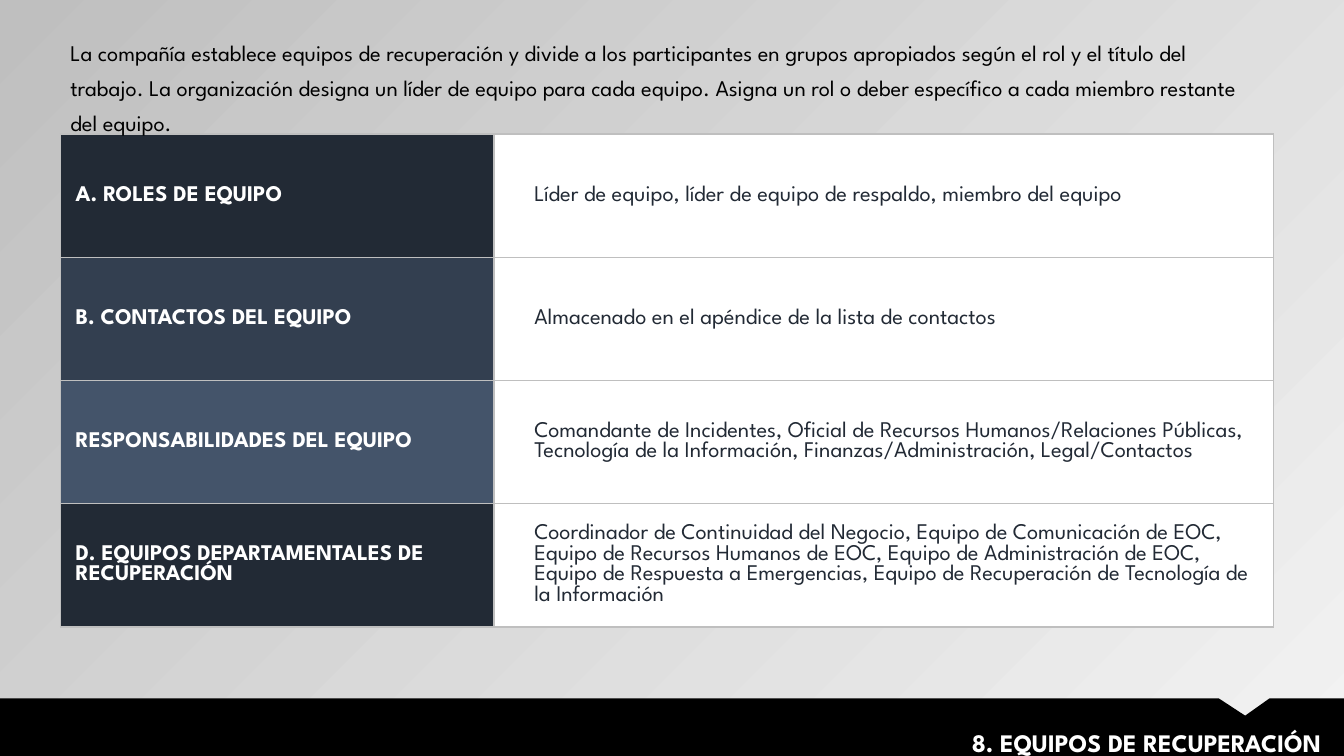
from lxml import etree
from pptx import Presentation
from pptx.dml.color import RGBColor
from pptx.enum.text import MSO_ANCHOR, MSO_AUTO_SIZE, PP_ALIGN
from pptx.oxml.ns import qn
from pptx.util import Inches, Pt

MIDDLE = MSO_ANCHOR.MIDDLE
GROW = MSO_AUTO_SIZE.SHAPE_TO_FIT_TEXT
LEFT, RIGHT = PP_ALIGN.LEFT, PP_ALIGN.RIGHT

WIDTH, HEIGHT = Inches(13.33), Inches(7.5)
FONT = "League Spartan"
COLOURS = {
    "black": "000000",
    "white": "FFFFFF",
    "light": "F2F2F2",
    "grey": "BFBFBF",
    "navy": "222A35",
    "slate": "333F50",
    "steel": "44546A",
}
MARGIN, CONTENT_WIDTH = 4.5, 90.25
LABEL_WIDTH = 32.25
TABLE_TOP, ROW_HEIGHT = 17.73, 16.3
BAND_TOP = 92.4

INTRO = (
    "La compañía establece equipos de recuperación y divide a los participantes en grupos "
    "apropiados según el rol y el título del trabajo. La organización designa un líder de equipo "
    "para cada equipo. Asigna un rol o deber específico a cada miembro restante del equipo."
)
TEAMS = [
    ("A. ROLES DE EQUIPO", "navy",
     "Líder de equipo, líder de equipo de respaldo, miembro del equipo"),
    ("B. CONTACTOS DEL EQUIPO", "slate",
     "Almacenado en el apéndice de la lista de contactos"),
    ("RESPONSABILIDADES DEL EQUIPO", "steel",
     "Comandante de Incidentes, Oficial de Recursos Humanos/Relaciones Públicas, "
     "Tecnología de la Información, Finanzas/Administración, Legal/Contactos"),
    ("D. EQUIPOS DEPARTAMENTALES DE RECUPERACIÓN", "navy",
     "Coordinador de Continuidad del Negocio, Equipo de Comunicación de EOC, "
     "Equipo de Recursos Humanos de EOC, Equipo de Administración de EOC, "
     "Equipo de Respuesta a Emergencias, Equipo de Recuperación de Tecnología de la Información"),
]


def across(percent):
    return round(WIDTH * percent / 100)


def down(percent):
    return round(HEIGHT * percent / 100)


def colour(name):
    return RGBColor.from_string(COLOURS[name])


def add_span(para, text, size, ink, bold=False):
    span = para.add_run()
    span.text = text
    span.font.name = FONT
    span.font.size = Pt(size)
    span.font.bold = bold
    span.font.color.rgb = colour(ink)


def paint_background(page):
    fill = page.background.fill
    fill.gradient()
    fill.gradient_angle = 135
    for stop, name in zip(fill.gradient_stops, ("light", "grey")):
        stop.color.rgb = colour(name)


def add_text(page, left, top, width, height, text, size, ink, bold=False, align=LEFT):
    box = page.shapes.add_textbox(across(left), down(top), across(width), down(height))
    frame = box.text_frame
    frame.word_wrap = True
    frame.auto_size = GROW
    para = frame.paragraphs[0]
    para.alignment = align
    para.line_spacing = 1.3
    add_span(para, text, size, ink, bold)


def add_borders(cell):
    properties = cell._tc.get_or_add_tcPr()
    for index, side in enumerate(("lnL", "lnR", "lnT", "lnB")):
        line = etree.Element(qn(f"a:{side}"), w=str(Pt(1)))
        fill = etree.SubElement(line, qn("a:solidFill"))
        etree.SubElement(fill, qn("a:srgbClr"), val=COLOURS["grey"])
        properties.insert(index, line)


def fill_cell(cell, text, back, ink, inset, bold=False):
    cell.fill.solid()
    cell.fill.fore_color.rgb = colour(back)
    cell.vertical_anchor = MIDDLE
    cell.margin_left = Inches(inset)
    cell.margin_right = cell.margin_top = cell.margin_bottom = Inches(0.15)
    add_span(cell.text_frame.paragraphs[0], text, 16, ink, bold)
    add_borders(cell)


def add_team_table(page):
    frame = page.shapes.add_table(
        len(TEAMS), 2, across(MARGIN), down(TABLE_TOP),
        across(CONTENT_WIDTH), down(ROW_HEIGHT * len(TEAMS)))
    table = frame.table
    table.first_row = table.horz_banding = False
    table.columns[0].width = across(LABEL_WIDTH)
    table.columns[1].width = across(CONTENT_WIDTH - LABEL_WIDTH)
    for index, (label, back, detail) in enumerate(TEAMS):
        table.rows[index].height = down(ROW_HEIGHT)
        fill_cell(table.cell(index, 0), label, back, "white", 0.15, bold=True)
        fill_cell(table.cell(index, 1), detail, "white", "navy", 0.4)


def add_footer_band(page):
    outline = [(0, BAND_TOP), (90.7, BAND_TOP), (92.65, 94.67), (94.45, BAND_TOP),
               (100, BAND_TOP), (100, 100), (0, 100)]
    points = [(across(x), down(y)) for x, y in outline]
    builder = page.shapes.build_freeform(*points[0])
    builder.add_line_segments(points[1:], close=True)
    band = builder.convert_to_shape()
    band.shadow.inherit = False
    band.fill.solid()
    band.fill.fore_color.rgb = colour("black")
    band.line.fill.background()


def main():
    deck = Presentation()
    deck.slide_width, deck.slide_height = WIDTH, HEIGHT
    page = deck.slides.add_slide(deck.slide_layouts[6])
    paint_background(page)
    add_team_table(page)
    add_footer_band(page)
    add_text(page, 31.05, 94.4, 68, 5.33, "8. EQUIPOS DE RECUPERACIÓN", 18, "white", True, RIGHT)
    add_text(page, MARGIN, 3.47, CONTENT_WIDTH, 12.13, INTRO, 16, "black")
    deck.save("out.pptx")


if __name__ == "__main__":
    main()
